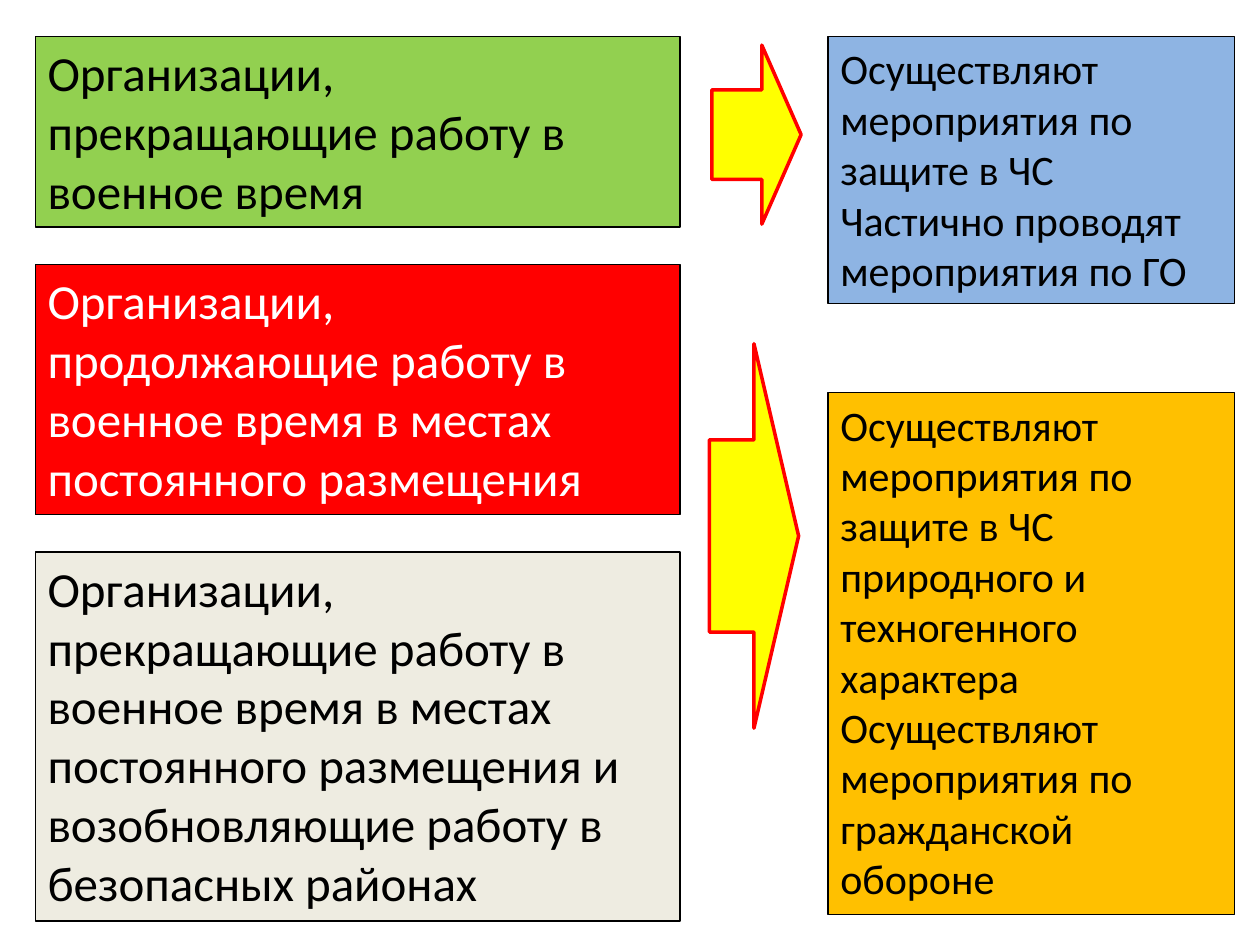
from dataclasses import dataclass

from pptx import Presentation
from pptx.dml.color import RGBColor
from pptx.enum.shapes import MSO_SHAPE as Preset
from pptx.enum.text import MSO_ANCHOR as Anchor, MSO_AUTO_SIZE as AutoSize, PP_ALIGN as Align
from pptx.shapes.autoshape import Shape
from pptx.slide import Slide
from pptx.util import Cm, Pt

FONT = "Calibri"


@dataclass(frozen=True)
class Column:
    left: float
    width: float
    font_size: int


@dataclass(frozen=True)
class Box:
    column: Column
    top: float
    height: float
    fill: str
    text: str
    color: str = "000000"


@dataclass(frozen=True)
class Arrow:
    left: float
    top: float
    height: float
    head: float
    width: float = 1.8


ORGANIZATIONS = Column(left=0.71, width=13, font_size=28)
MEASURES = Column(left=16.69, width=8.2, font_size=24)

BOXES = [
    Box(ORGANIZATIONS, 0.74, 3.84, "92D050",
        "Организации, прекращающие работу в военное время"),
    Box(MEASURES, 7.92, 10.52, "FFC000",
        "Осуществляют мероприятия по защите в ЧС природного и техногенного характера\n"
        "Осуществляют мероприятия по гражданской обороне"),
    Box(ORGANIZATIONS, 5.33, 5.05, "FF0000",
        "Организации, продолжающие работу в военное время в местах постоянного размещения",
        "FFFFFF"),
    Box(MEASURES, 0.74, 5.38, "8EB4E3",
        "Осуществляют мероприятия по защите в ЧС\n"
        "Частично проводят мероприятия по ГО"),
    Box(ORGANIZATIONS, 11.13, 7.44, "EEECE1",
        "Организации, прекращающие работу в военное время в местах постоянного размещения "
        "и возобновляющие работу в безопасных районах"),
]

ARROWS = [
    Arrow(left=14.3, top=6.93, height=7.75, head=0.5),
    Arrow(left=14.35, top=0.91, height=3.61, head=0.44),
]


def rgb(value: str) -> RGBColor:
    """Turn a hex string into a colour."""
    return RGBColor.from_string(value)


def paint(shape: Shape, fill: str, line: str, line_width: float) -> None:
    """Give a shape a flat fill and an outline without shadow."""
    shape.shadow.inherit = False
    shape.fill.solid()
    shape.fill.fore_color.rgb = rgb(fill)
    shape.line.color.rgb = rgb(line)
    shape.line.width = Pt(line_width)


def draw_box(slide: Slide, box: Box) -> None:
    """Draw one outlined box with its paragraphs."""
    column = box.column
    shape = slide.shapes.add_shape(
        Preset.RECTANGLE, Cm(column.left), Cm(box.top), Cm(column.width), Cm(box.height))
    paint(shape, box.fill, "000000", 0.75)
    frame = shape.text_frame
    frame.word_wrap = True
    frame.auto_size = AutoSize.SHAPE_TO_FIT_TEXT
    frame.vertical_anchor = Anchor.TOP
    frame.text = box.text
    for paragraph in frame.paragraphs:
        paragraph.alignment = Align.LEFT
        for run in paragraph.runs:
            run.font.name = FONT
            run.font.size = Pt(column.font_size)
            run.font.color.rgb = rgb(box.color)


def draw_arrow(slide: Slide, arrow: Arrow) -> None:
    """Draw one block arrow pointing from organizations to measures."""
    shape = slide.shapes.add_shape(
        Preset.RIGHT_ARROW, Cm(arrow.left), Cm(arrow.top), Cm(arrow.width), Cm(arrow.height))
    shape.adjustments[1] = arrow.head
    paint(shape, "FFFF00", "FF0000", 2)


def main() -> None:
    """Build the slide and save it."""
    presentation = Presentation()
    presentation.slide_width = Cm(25.4)
    presentation.slide_height = Cm(19.05)
    slide = presentation.slides.add_slide(presentation.slide_layouts[6])
    for box in BOXES:
        draw_box(slide, box)
    for arrow in ARROWS:
        draw_arrow(slide, arrow)
    presentation.save("out.pptx")


if __name__ == "__main__":
    main()
